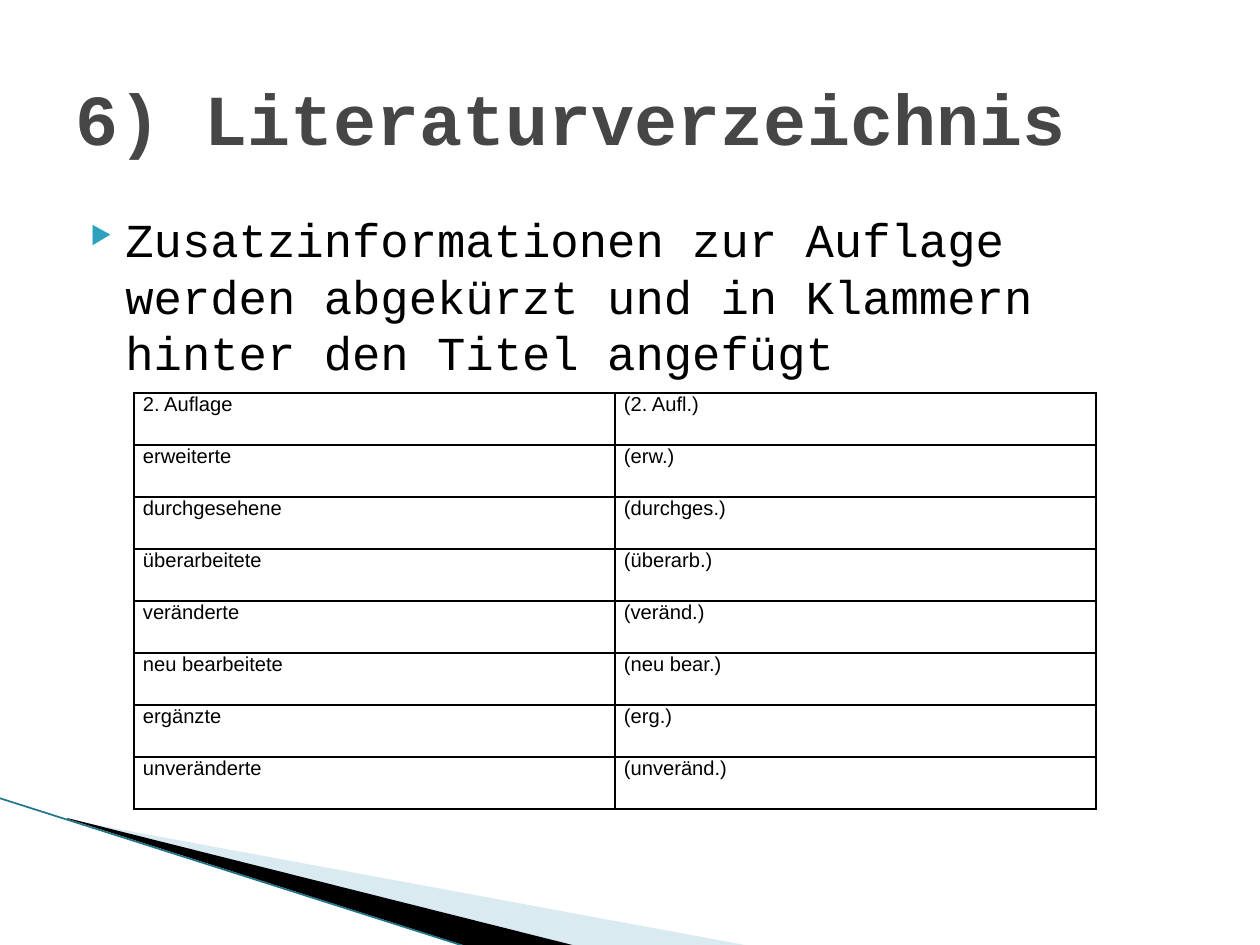
from lxml import etree
from pptx import Presentation
from pptx import util as u
from pptx.dml.color import RGBColor
from pptx.enum import shapes, text
from pptx.oxml.ns import qn

SCALE = 914400 / 126


def px(n):
    return u.Emu(round(n * SCALE))


def color(code):
    return RGBColor.from_string(code)


def sub(node, tag, **attrs):
    return etree.SubElement(node, qn(tag), attrs)


class Deck:
    """Holds the style and the current slide."""
    mono, sans = "Courier New", "Arial"
    ink, gray, teal = "000000", "464646", "2DA2BF"

    def __init__(self, wide, high):
        self.prs = Presentation()
        self.prs.slide_width, self.prs.slide_height = px(wide), px(high)
        self.slide = self.prs.slides.add_slide(self.prs.slide_layouts[6])

    def run(self, para, words, size, face, code, bold=False):
        run = para.add_run()
        run.text = words
        font = run.font
        font.size, font.name, font.bold = u.Pt(size), face, bold
        font.color.rgb = color(code)

    def box(self, left, top, wide, high, anchor):
        """Adds a wrapping text box and returns its first paragraph."""
        shape = self.slide.shapes.add_textbox(*map(px, (left, top, wide, high)))
        frame = shape.text_frame
        frame.word_wrap = True
        frame.vertical_anchor = anchor
        return frame.paragraphs[0]

    def title(self, words, *place):
        para = self.box(*place, text.MSO_ANCHOR.MIDDLE)
        self.run(para, words, 41, self.mono, self.gray, True)

    def bullet(self, words, *place):
        para = self.box(*place, text.MSO_ANCHOR.TOP)
        props = para._p.get_or_add_pPr()
        props.set("marL", str(px(50)))
        props.set("indent", str(px(-35)))
        sub(sub(props, "a:buClr"), "a:srgbClr", val=self.teal)
        sub(props, "a:buSzPct", val="52000")
        sub(props, "a:buChar", char="▶")
        self.run(para, words, 27, self.mono, self.ink)

    def wedge(self, points, code, alpha=100):
        first, *rest = points
        build = self.slide.shapes.build_freeform(*first, scale=SCALE)
        build.add_line_segments(rest, close=True)
        shape = build.convert_to_shape()
        shape.shadow.inherit = False
        shape.fill.solid()
        shape.fill.fore_color.rgb = color(code)
        shape.line.fill.background()
        if alpha < 100:
            tint = shape._element.spPr.find(qn("a:solidFill"))[0]
            sub(tint, "a:alpha", val=str(alpha * 1000))

    def line(self, start, end, code, width):
        line = self.slide.shapes.add_connector(
            shapes.MSO_CONNECTOR.STRAIGHT, *map(px, start + end))
        line.line.color.rgb = color(code)
        line.line.width = u.Pt(width)
        sub(line._element.spPr, "a:effectLst")

    def border(self, cell):
        props = cell._tc.get_or_add_tcPr()
        for spot, side in enumerate("LRTB"):
            edge = etree.Element(qn("a:ln" + side), w=str(u.Pt(1)))
            sub(sub(edge, "a:solidFill"), "a:srgbClr", val=self.ink)
            props.insert(spot, edge)

    def table(self, rows, left, top, wide, high):
        """Draws a ruled grid; wide and high are those of one cell."""
        count = len(rows[0])
        grid = self.slide.shapes.add_table(
            len(rows), count, px(left), px(top),
            px(wide * count), px(high * len(rows))).table
        grid.first_row = grid.horz_banding = False
        for col in grid.columns:
            col.width = px(wide)
        for r, row in enumerate(rows):
            grid.rows[r].height = px(high)
            for c, words in enumerate(row):
                cell = grid.cell(r, c)
                cell.fill.background()
                cell.margin_left = cell.margin_right = px(9)
                cell.margin_top = cell.margin_bottom = 0
                para = cell.text_frame.paragraphs[0]
                para.alignment = text.PP_ALIGN.JUSTIFY
                self.run(para, words, 11.5, self.sans, self.ink)
                self.border(cell)


def main():
    deck = Deck(1260, 945)
    deck.wedge([(69, 820), (750, 946), (575, 946), (69, 819)], "A0CBDC", 40)
    deck.wedge([(67, 818), (576, 946), (469, 947), (68, 819)], deck.ink)
    deck.line((-1, 798), (467, 947), "1F7488", 0.95)
    deck.bullet("Zusatzinformationen zur Auflage werden abgekürzt und in "
                "Klammern hinter den Titel angefügt", 63, 204, 1134, 624)
    deck.title("6) Literaturverzeichnis", 63, 38, 1134, 158)
    deck.table([
        ("2. Auflage", "(2. Aufl.)"),
        ("erweiterte", "(erw.)"),
        ("durchgesehene", "(durchges.)"),
        ("überarbeitete", "(überarb.)"),
        ("veränderte", "(veränd.)"),
        ("neu bearbeitete", "(neu bear.)"),
        ("ergänzte", "(erg.)"),
        ("unveränderte", "(unveränd.)"),
    ], 134, 393, 481, 52)
    deck.prs.save("out.pptx")


if __name__ == "__main__":
    main()
